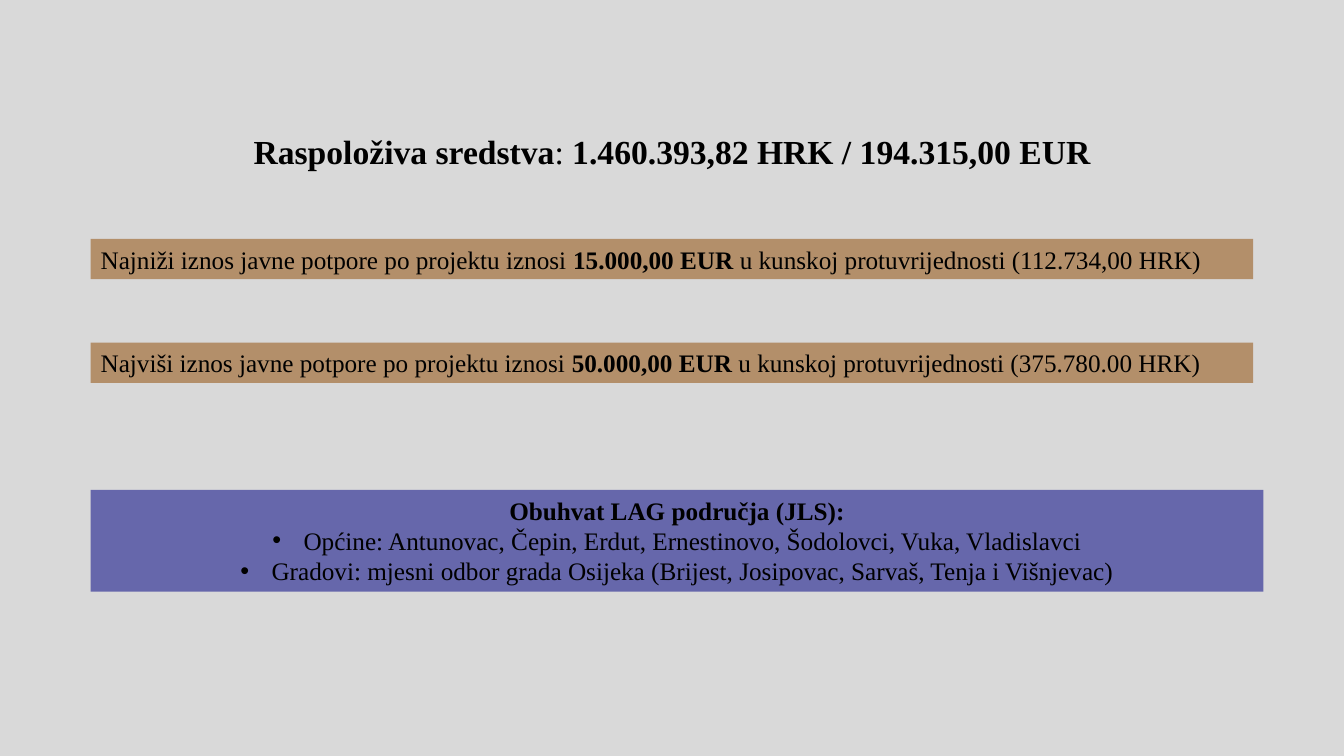
from pptx import Presentation
from pptx.dml.color import RGBColor
from pptx.enum.shapes import MSO_SHAPE
from pptx.enum.text import MSO_ANCHOR, MSO_AUTO_SIZE, PP_ALIGN
from pptx.oxml.xmlchemy import OxmlElement
from pptx.util import Inches, Pt

BACKGROUND = RGBColor(0xD9, 0xD9, 0xD9)
TAN = RGBColor(0xB3, 0x8F, 0x6A)
VIOLET = RGBColor(0x66, 0x67, 0xAB)
BLACK = RGBColor(0, 0, 0)


class FundingSlide:
    """Style and current slide, measured on a grid of tenth-inch cells."""

    cell = Inches(0.1)
    font_format = {"name": "Times New Roman"}
    bullet_format = {"marL": str(Inches(0.31)), "indent": str(-Inches(0.31))}

    def __init__(self, presentation):
        self.slide = presentation.slides.add_slide(presentation.slide_layouts[6])
        fill = self.slide.background.fill
        fill.solid()
        fill.fore_color.rgb = BACKGROUND

    def place(self, *cells):
        return [round(count * self.cell) for count in cells]

    def add_runs(self, paragraph, runs, size, **paragraph_format):
        for name, value in paragraph_format.items():
            setattr(paragraph, name, value)
        for text, bold in runs:
            run = paragraph.add_run()
            run.text = text
            for name, value in {**self.font_format, "size": Pt(size), "bold": bold}.items():
                setattr(run.font, name, value)
            run.font.color.rgb = BLACK

    def bullet(self, paragraph):
        properties = paragraph._p.get_or_add_pPr()
        for name, value in self.bullet_format.items():
            properties.set(name, value)
        font = OxmlElement("a:buFont")
        font.set("typeface", "Arial")
        character = OxmlElement("a:buChar")
        character.set("char", "•")
        properties.extend([font, character])

    def title(self, runs, left, top, width, height):
        frame = self.slide.shapes.add_textbox(*self.place(left, top, width, height)).text_frame
        frame.word_wrap = True
        frame.vertical_anchor = MSO_ANCHOR.BOTTOM
        self.add_runs(frame.paragraphs[0], runs, 24,
                      alignment=PP_ALIGN.CENTER, line_spacing=Pt(40))

    def band(self, color, heading, left, top, width, height,
             alignment=PP_ALIGN.LEFT, bullets=()):
        shape = self.slide.shapes.add_shape(
            MSO_SHAPE.RECTANGLE, *self.place(left, top, width, height))
        shape.shadow.inherit = False
        shape.fill.solid()
        shape.fill.fore_color.rgb = color
        shape.line.fill.background()
        frame = shape.text_frame
        frame_format = {"word_wrap": True, "vertical_anchor": MSO_ANCHOR.TOP,
                        "auto_size": MSO_AUTO_SIZE.SHAPE_TO_FIT_TEXT}
        for name, value in frame_format.items():
            setattr(frame, name, value)
        self.add_runs(frame.paragraphs[0], heading, 18, alignment=alignment)
        for text in bullets:
            paragraph = frame.add_paragraph()
            self.add_runs(paragraph, [(text, False)], 18, alignment=alignment)
            self.bullet(paragraph)


def main():
    presentation = Presentation()
    presentation.slide_width = Inches(13.33)
    presentation.slide_height = Inches(7.5)
    funding = FundingSlide(presentation)

    funding.title([("Raspoloživa sredstva", True), (": ", False),
                   ("1.460.393,82 HRK / 194.315,00 EUR", True)], 8.5, 9.6, 116.3, 7.9)

    limits = [("Najniži", "15.000,00", "112.734,00"),
              ("Najviši", "50.000,00", "375.780.00")]
    for index, (limit, euros, kunas) in enumerate(limits):
        funding.band(TAN, [(f"{limit} iznos javne potpore po projektu iznosi ", False),
                           (f"{euros} EUR ", True),
                           (f"u kunskoj protuvrijednosti ({kunas} HRK)", False)],
                     9, 23.7 + 10.3 * index, 115.3, 4)

    funding.band(VIOLET, [("Obuhvat LAG područja (JLS):", True)], 9, 48.6, 116.3, 10.1,
                 PP_ALIGN.CENTER,
                 ["Općine: Antunovac, Čepin, Erdut, Ernestinovo, Šodolovci, Vuka, Vladislavci",
                  "Gradovi: mjesni odbor grada Osijeka "
                  "(Brijest, Josipovac, Sarvaš, Tenja i Višnjevac)"])
    presentation.save("out.pptx")


if __name__ == "__main__":
    main()
